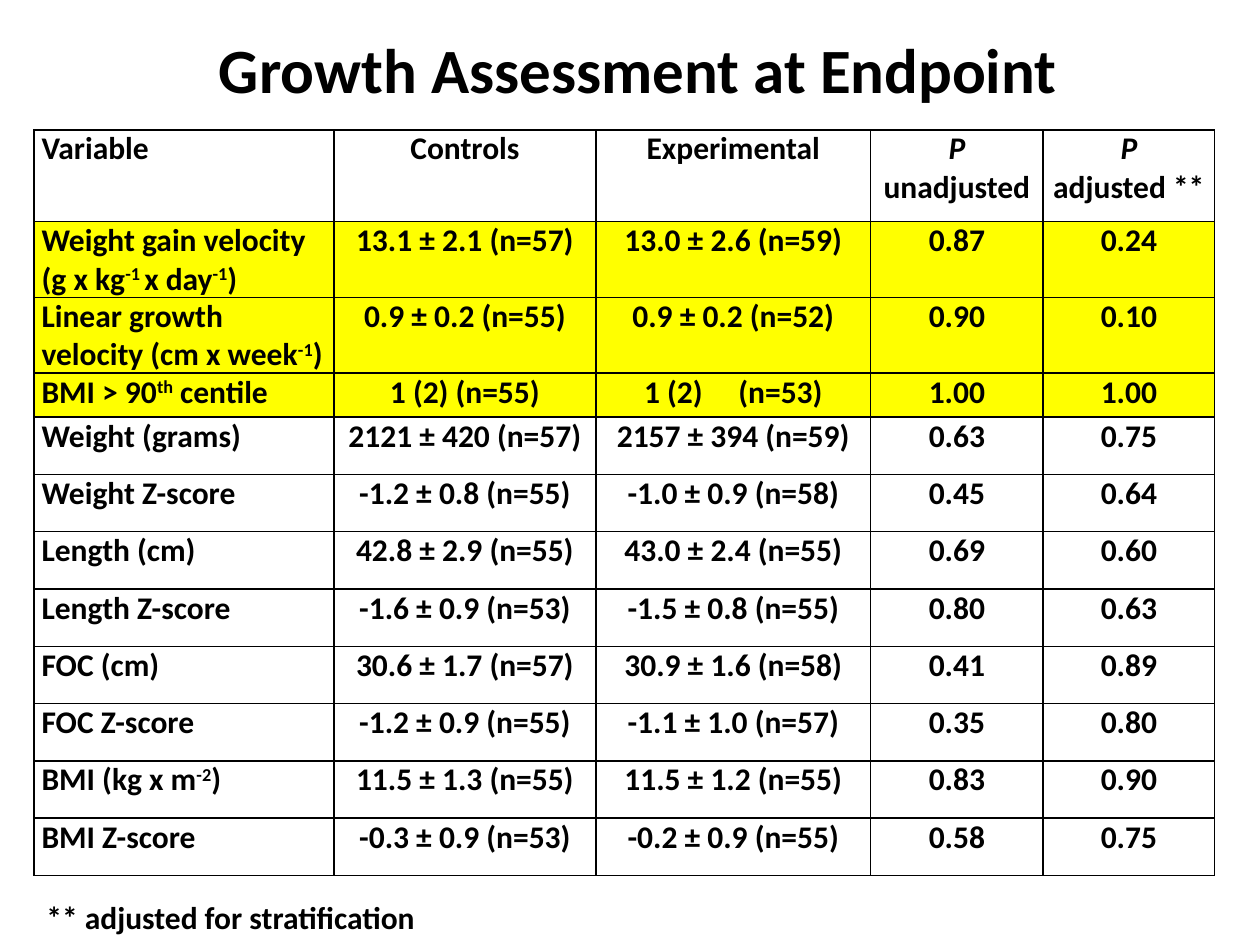
from lxml import etree
from pptx import Presentation
from pptx.dml.color import RGBColor
from pptx.enum.text import MSO_ANCHOR, PP_ALIGN
from pptx.oxml.ns import qn
from pptx.util import Inches, Pt

LEFT, CENTER = PP_ALIGN.LEFT, PP_ALIGN.CENTER
TOP, MIDDLE = MSO_ANCHOR.TOP, MSO_ANCHOR.MIDDLE
BLACK = RGBColor(0x00, 0x00, 0x00)
YELLOW = RGBColor(0xFF, 0xFF, 0x00)

MARKS = {
    "^": {"baseline": "30000"},
    "_": {"i": "1"},
    "~": {"spc": "1630"},
}
COLUMN_WIDTHS = [2.38, 2.08, 2.18, 1.37, 1.36]
TABLE_HEIGHT = 5.92
TOP_HEIGHTS = [0.73, 0.6, 0.6, 0.35]
HIGHLIGHTED = range(1, 4)
GROWTH = [
    ["Variable", "Controls", "Experimental", "_P_ unadjusted", "_P_\nadjusted **"],
    ["Weight gain velocity\n(g x kg^-1 ^x day^-1^)", "13.1 ± 2.1 (n=57)", "13.0 ± 2.6 (n=59)", "0.87", "0.24"],
    ["Linear growth velocity (cm x week^-1^)", "0.9 ± 0.2 (n=55)", "0.9 ± 0.2 (n=52)", "0.90", "0.10"],
    ["BMI > 90^th^ centile", "1 (2) (n=55)", "1 (2)~ ~(n=53)", "1.00", "1.00"],
    ["Weight (grams)", "2121 ± 420 (n=57)", "2157 ± 394 (n=59)", "0.63", "0.75"],
    ["Weight Z-score", "-1.2 ± 0.8 (n=55)", "-1.0 ± 0.9 (n=58)", "0.45", "0.64"],
    ["Length (cm)", "42.8 ± 2.9 (n=55)", "43.0 ± 2.4 (n=55)", "0.69", "0.60"],
    ["Length Z-score", "-1.6 ± 0.9 (n=53)", "-1.5 ± 0.8 (n=55)", "0.80", "0.63"],
    ["FOC (cm)", "30.6 ± 1.7 (n=57)", "30.9 ± 1.6 (n=58)", "0.41", "0.89"],
    ["FOC Z-score", "-1.2 ± 0.9 (n=55)", "-1.1 ± 1.0 (n=57)", "0.35", "0.80"],
    ["BMI (kg x m^-2^)", "11.5 ± 1.3 (n=55)", "11.5 ± 1.2 (n=55)", "0.83", "0.90"],
    ["BMI Z-score", "-0.3 ± 0.9 (n=53)", "-0.2 ± 0.9 (n=55)", "0.58", "0.75"],
]


class SlideBuilder:
    def __init__(self, page):
        self.page = page
        self.font = {"name": "Calibri", "bold": True}
        self.cell_format = {
            "margin_left": Inches(0.06),
            "margin_right": Inches(0.06),
            "margin_top": 0,
            "margin_bottom": 0,
            "vertical_anchor": TOP,
        }

    def fill_text(self, frame, text, size=18, align=LEFT, spacing=1.0):
        for index, line in enumerate(text.split("\n")):
            para = frame.add_paragraph() if index else frame.paragraphs[0]
            para.alignment = align
            para.line_spacing = spacing
            for words, marks in self.pieces(line):
                span = para.add_run()
                span.text = words
                for name, value in {**self.font, "size": Pt(size)}.items():
                    setattr(span.font, name, value)
                span.font.color.rgb = BLACK
                for name, value in marks.items():
                    span.font._element.set(name, value)

    def pieces(self, line):
        mark = next((mark for mark in MARKS if mark in line), None)
        for index, words in enumerate(line.split(mark) if mark else [line]):
            if words:
                yield words, MARKS[mark] if index % 2 else {}

    def text(self, text, left, top, width, height, anchor=TOP, wrap=True, **style):
        box = self.page.shapes.add_textbox(
            Inches(left), Inches(top), Inches(width), Inches(height)
        )
        box.text_frame.word_wrap = wrap
        box.text_frame.vertical_anchor = anchor
        self.fill_text(box.text_frame, text, **style)

    def border(self, cell):
        properties = cell._tc.get_or_add_tcPr()
        for index, side in enumerate(("a:lnL", "a:lnR", "a:lnT", "a:lnB")):
            line = etree.Element(qn(side), w=str(Pt(1)))
            fill = etree.SubElement(line, qn("a:solidFill"))
            etree.SubElement(fill, qn("a:srgbClr"), val=str(BLACK))
            properties.insert(index, line)

    def table(self, rows, left, top, widths, heights, highlighted):
        grid = self.page.shapes.add_table(
            len(rows), len(widths), Inches(left), Inches(top),
            Inches(sum(widths)), Inches(sum(heights)),
        ).table
        grid.first_row = grid.horz_banding = False
        for column, width in zip(grid.columns, widths):
            column.width = Inches(width)
        for row, height in zip(grid.rows, heights):
            row.height = Inches(height)
        for row_index, values in enumerate(rows):
            for column_index, value in enumerate(values):
                cell = grid.cell(row_index, column_index)
                for name, setting in self.cell_format.items():
                    setattr(cell, name, setting)
                if row_index in highlighted:
                    cell.fill.solid()
                    cell.fill.fore_color.rgb = YELLOW
                else:
                    cell.fill.background()
                self.border(cell)
                self.fill_text(cell.text_frame, value, align=CENTER if column_index else LEFT)


def main():
    deck = Presentation()
    deck.slide_width, deck.slide_height = Inches(10), Inches(7.5)
    builder = SlideBuilder(deck.slides.add_slide(deck.slide_layouts[6]))
    builder.text("Growth Assessment at Endpoint", 0.38, 0.13, 9.37, 0.9,
                 anchor=MIDDLE, size=36, align=CENTER, spacing=0.9)
    builder.text("** adjusted for stratification", 0.27, 7.08, 3.16, 0.4, wrap=False)
    lower_rows = len(GROWTH) - len(TOP_HEIGHTS)
    lower_height = (TABLE_HEIGHT - sum(TOP_HEIGHTS)) / lower_rows
    builder.table(GROWTH, 0.27, 1.03, COLUMN_WIDTHS,
                  TOP_HEIGHTS + [lower_height] * lower_rows, HIGHLIGHTED)
    deck.save("out.pptx")


if __name__ == "__main__":
    main()
